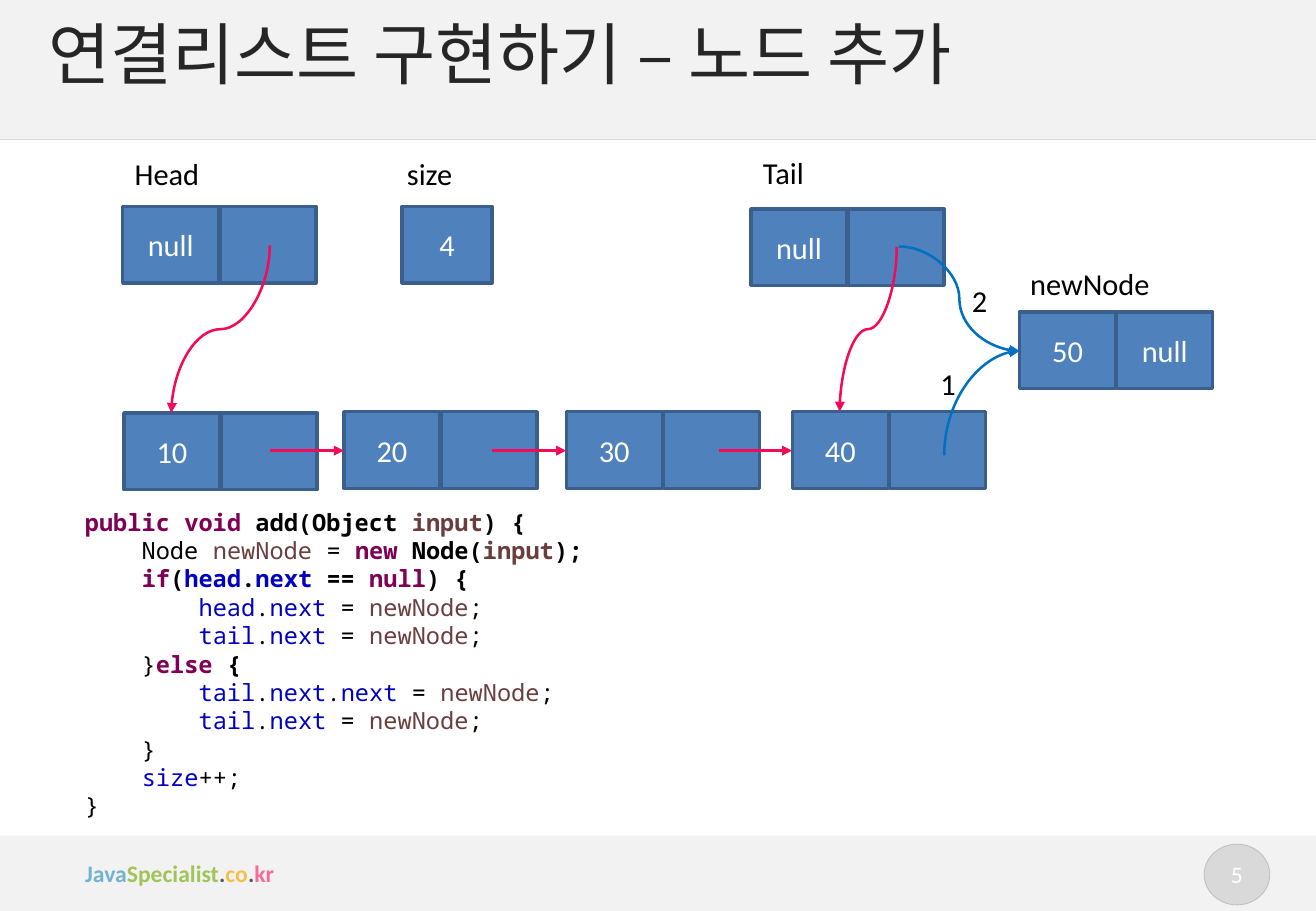
from itertools import groupby

from lxml import etree
from pptx import Presentation
from pptx.dml.color import RGBColor
from pptx.enum.shapes import MSO_CONNECTOR, MSO_SHAPE
from pptx.enum.text import MSO_ANCHOR, MSO_AUTO_SIZE, PP_ALIGN
from pptx.oxml.ns import qn
from pptx.util import Inches, Pt

RECT, OVAL = MSO_SHAPE.RECTANGLE, MSO_SHAPE.OVAL
STRAIGHT, CURVE = MSO_CONNECTOR.STRAIGHT, MSO_CONNECTOR.CURVE
MIDDLE, LEFT, CENTER = MSO_ANCHOR.MIDDLE, PP_ALIGN.LEFT, PP_ALIGN.CENTER
NO_FIT = MSO_AUTO_SIZE.NONE

WHITE = RGBColor(0xFF, 0xFF, 0xFF)
BLACK = RGBColor(0, 0, 0)
BAND = RGBColor(0xF2, 0xF2, 0xF2)
RULE = RGBColor(0xD9, 0xD9, 0xD9)
BADGE_EDGE = RGBColor(0xBF, 0xBF, 0xBF)
TITLE = RGBColor(0x26, 0x26, 0x26)
CELL = RGBColor(0x4F, 0x81, 0xBD)
CELL_EDGE = RGBColor(0x3A, 0x5F, 0x8C)
LINK = RGBColor(0xF3, 0x0B, 0x58)
NEW_LINK = RGBColor(0x00, 0x70, 0xC0)
KEYWORD = RGBColor(0x7F, 0x00, 0x55)
FIELD = RGBColor(0x00, 0x00, 0xC0)
VARIABLE = RGBColor(0x6A, 0x3E, 0x3E)
DOT = RGBColor(0x59, 0x59, 0x59)

SITE = [
    ("Java", RGBColor(0x73, 0xB2, 0xD1)),
    ("Specialist", RGBColor(0xA0, 0xC4, 0x58)),
    (".", DOT),
    ("co", RGBColor(0xF6, 0xBF, 0x4A)),
    (".", DOT),
    ("kr", RGBColor(0xF8, 0x6A, 0x9A)),
]
CODE_COLORS = {
    **dict.fromkeys(["public", "void", "new", "if", "null", "else"], KEYWORD),
    **dict.fromkeys(["head", "tail", "next", "size"], FIELD),
    **dict.fromkeys(["input", "newNode"], VARIABLE),
}
CODE = [
    ("", "public void add(Object input) {"),
    ("    Node newNode = ", "new Node(input);"),
    ("", "    if(head.next == null) {"),
    ("        head.next = newNode;", ""),
    ("        tail.next = newNode;", ""),
    ("    }", "else {"),
    ("        tail.next.next = newNode;", ""),
    ("        tail.next = newNode;", ""),
    ("    }", ""),
    ("    size++;", ""),
    ("}", ""),
]
NODES = [
    (1.01, 1.7, "null", ""),
    (1.02, 3.4, "10", ""),
    (2.83, 3.39, "20", ""),
    (4.66, 3.39, "30", ""),
    (6.18, 1.72, "null", ""),
    (6.52, 3.39, "40", ""),
    (8.39, 2.57, "50", "null"),
]
LABELS = [
    (1.01, 1.23, 0.74, "Head"),
    (3.25, 1.23, 0.58, "size"),
    (6.18, 1.22, 0.54, "Tail"),
    (8.38, 2.13, 1.2, "newNode"),
    (7.64, 2.96, 0.33, "1"),
    (7.9, 2.27, 0.33, "2"),
]


def set_font(font, size, color, name="Calibri"):
    """Set face, size and colour of a font."""
    font.name, font.size, font.color.rgb = name, Pt(size), color


def clear_margins(tf):
    """Remove the insets of a text frame."""
    tf.margin_left = tf.margin_right = tf.margin_top = tf.margin_bottom = 0


def add_box(shapes, kind, x, y, w, h, fill, edge=None, weight=0, text="", size=18):
    """Add a filled shape with optional outline and centred text."""
    sp = shapes.add_shape(kind, Inches(x), Inches(y), Inches(w), Inches(h))
    sp.shadow.inherit = False
    sp.fill.solid()
    sp.fill.fore_color.rgb = fill
    if edge is None:
        sp.line.fill.background()
    else:
        sp.line.color.rgb, sp.line.width = edge, Pt(weight)
    if text:
        tf = sp.text_frame
        clear_margins(tf)
        tf.vertical_anchor = MIDDLE
        p = tf.paragraphs[0]
        p.text, p.alignment = text, CENTER
        set_font(p.font, size, WHITE)


def add_text(s, x, y, w, h, wrap=True):
    """Add an empty text box and return its text frame."""
    tf = s.shapes.add_textbox(Inches(x), Inches(y), Inches(w), Inches(h)).text_frame
    tf.word_wrap = wrap
    return tf


def add_line(s, kind, start, end, color, weight):
    """Add a connector without shadow."""
    c = s.shapes.add_connector(kind, *map(Inches, (*start, *end)))
    c.line.color.rgb, c.line.width = color, Pt(weight)
    etree.SubElement(c._element.spPr, qn("a:effectLst"))
    return c


def add_arrow(s, start, end, color, kind=STRAIGHT, vertical=False, preset=None):
    """Add an arrow; a vertical one leaves its start up or down."""
    if vertical:
        cx, cy = (start[0] + end[0]) / 2, (start[1] + end[1]) / 2
        dx, dy = (end[1] - start[1]) / 2, (start[0] - end[0]) / 2
        start, end = (cx - dx, cy - dy), (cx + dx, cy + dy)
    c = add_line(s, kind, start, end, color, 1.5)
    sp_pr = c._element.spPr
    if vertical:
        sp_pr.find(qn("a:xfrm")).set("rot", "5400000")
    if preset:
        sp_pr.find(qn("a:prstGeom")).set("prst", preset)
    etree.SubElement(c.line._get_or_add_ln(), qn("a:tailEnd")).set("type", "triangle")


def add_header(s, w, h):
    """Draw the title band and place the title on it."""
    add_box(s.shapes, RECT, 0, 0, w, h, BAND)
    add_line(s, STRAIGHT, (0, h), (w, h), RULE, 0.75)
    title = s.shapes.title
    s.shapes._spTree.append(title._element)
    title.left, title.top = Inches(0.4), Inches(0.13)
    title.width, title.height = Inches(w - 0.78), Inches(0.6)
    tf = title.text_frame
    clear_margins(tf)
    tf.vertical_anchor, tf.auto_size = MIDDLE, NO_FIT
    p = tf.paragraphs[0]
    p.text, p.alignment = "연결리스트 구현하기 – 노드 추가", LEFT
    set_font(p.font, 40, TITLE)


def add_footer(s, y, w, h):
    """Draw the footer band with site address and page badge."""
    add_box(s.shapes, RECT, 0, y, w, h, BAND)
    add_box(s.shapes, OVAL, w - 0.92, y + 0.07, 0.54, 0.5, RULE, BADGE_EDGE, 0.5, "5", 14)
    tf = add_text(s, 0.7, y + 0.19, 1.98, 0.24)
    clear_margins(tf)
    p = tf.paragraphs[0]
    p.font.bold = True
    for text, color in SITE:
        r = p.add_run()
        r.text = text
        set_font(r.font, 14, color)


def add_node(s, x, y, left, right):
    """Add a grouped list node of two cells."""
    group = s.shapes.add_group_shape()
    for i, text in enumerate((left, right)):
        add_box(group.shapes, RECT, x + 0.8 * i, y, 0.79, 0.63, CELL, CELL_EDGE, 2, text)


def add_diagram(s):
    """Draw the linked list, its labels and its links."""
    for node in NODES:
        add_node(s, *node)
    add_box(s.shapes, RECT, 3.31, 1.7, 0.74, 0.63, CELL, CELL_EDGE, 2, "4")
    for x, y, w, text in LABELS:
        p = add_text(s, x, y, w, 0.4, wrap=False).paragraphs[0]
        p.text = text
        set_font(p.font, 18, BLACK)
    for x1, x2 in ((2.22, 2.83), (4.05, 4.66), (5.92, 6.52)):
        add_arrow(s, (x1, 3.71), (x2, 3.71), LINK)
    add_arrow(s, (2.22, 2.02), (1.41, 3.4), LINK, CURVE, vertical=True)
    add_arrow(s, (7.38, 2.03), (6.91, 3.39), LINK, CURVE, vertical=True)
    add_arrow(s, (7.4, 2.03), (8.39, 2.89), NEW_LINK, CURVE)
    add_arrow(s, (7.77, 3.75), (8.39, 2.89), NEW_LINK, CURVE, True, "curvedConnector2")


def add_code(s, x, y, w, h):
    """Write the method with its words coloured by role."""
    tf = add_text(s, x, y, w, h)
    for i, parts in enumerate(CODE):
        p = tf.add_paragraph() if i else tf.paragraphs[0]
        for bold, part in enumerate(parts):
            for _, letters in groupby(part, str.isalpha):
                r = p.add_run()
                r.text = "".join(letters)
                r.font.bold = bool(bold)
                set_font(r.font, 14, CODE_COLORS.get(r.text, BLACK), "Noto Sans Mono")


def main():
    """Build and save the slide."""
    prs = Presentation()
    prs.slide_width, prs.slide_height = Inches(10.83), Inches(7.5)
    s = prs.slides.add_slide(prs.slide_layouts[5])
    add_footer(s, 6.88, 10.83, 0.62)
    add_header(s, 10.83, 1.15)
    add_diagram(s)
    add_code(s, 0.6, 4.13, 5.42, 2.69)
    prs.save("out.pptx")


if __name__ == "__main__":
    main()
